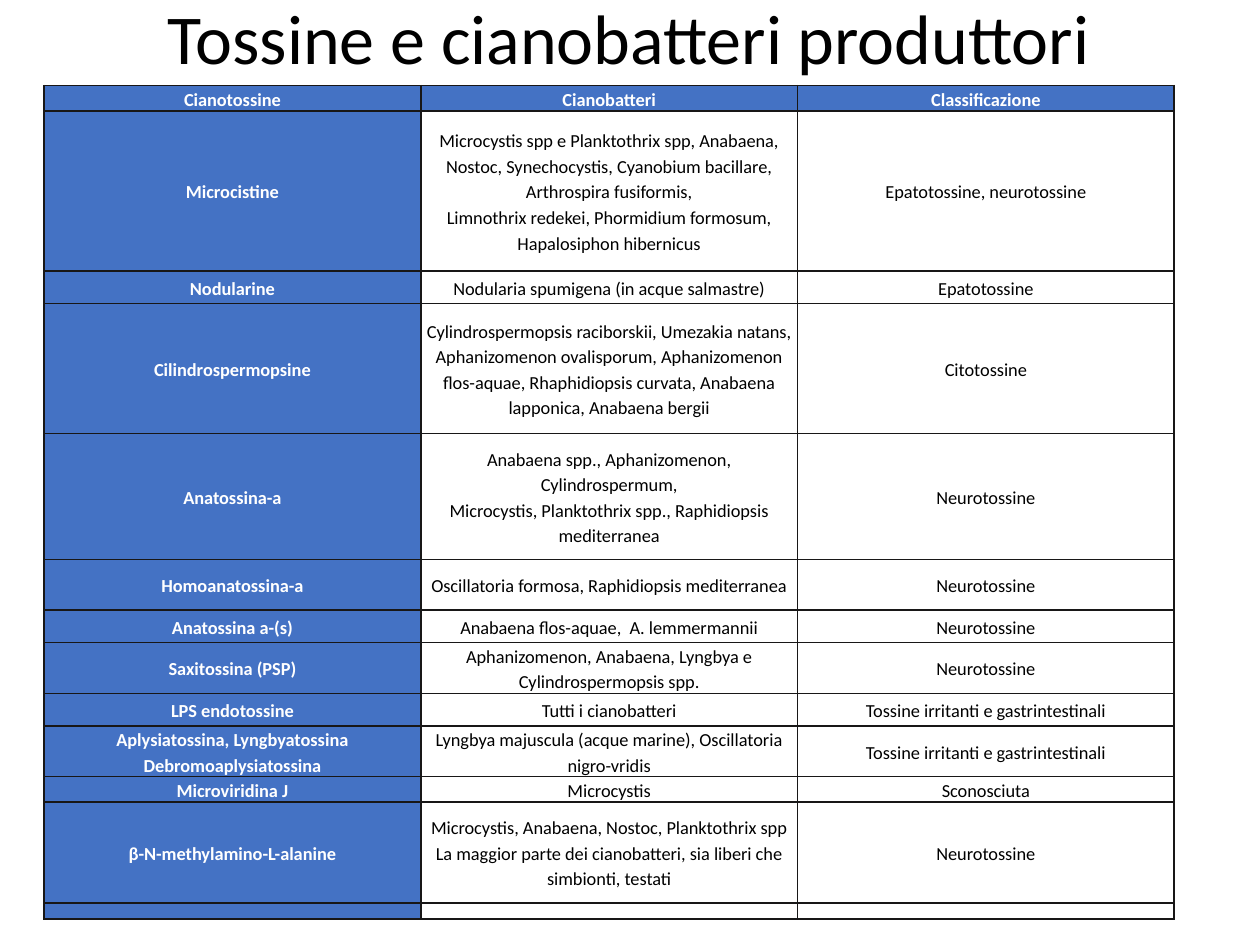
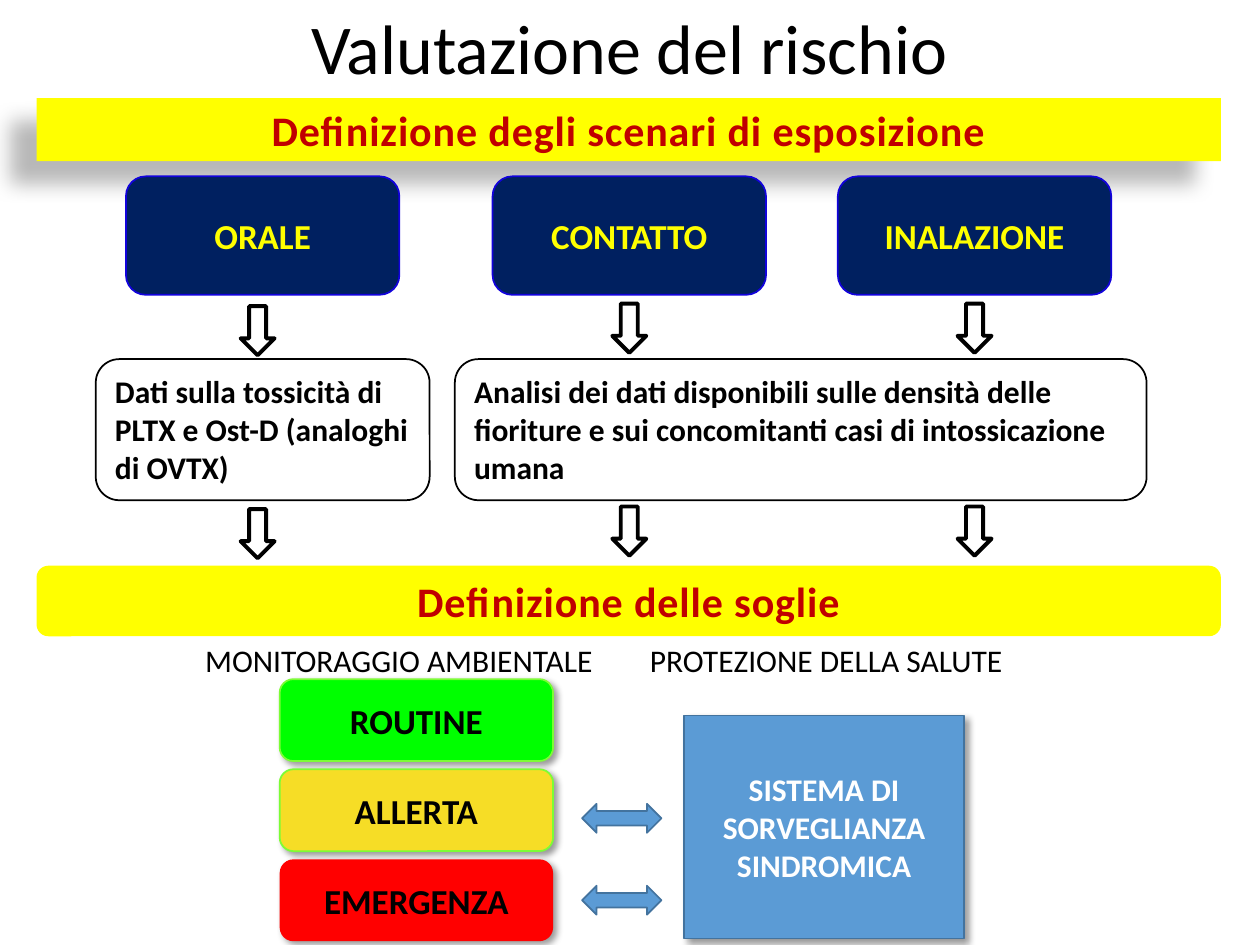
"""Builds two slides on cyanotoxins: the table of producers and the risk assessment chart."""
from lxml import etree
from pptx import Presentation
from pptx.dml.color import RGBColor
from pptx.enum.shapes import MSO_SHAPE
from pptx.enum.text import MSO_ANCHOR, MSO_AUTO_SIZE, PP_ALIGN
from pptx.oxml.ns import qn
from pptx.util import Inches, Pt

RECTANGLE = MSO_SHAPE.RECTANGLE
ROUNDED = MSO_SHAPE.ROUNDED_RECTANGLE
DOWN_ARROW = MSO_SHAPE.DOWN_ARROW
DOUBLE_ARROW = MSO_SHAPE.LEFT_RIGHT_ARROW
TOP, MIDDLE = MSO_ANCHOR.TOP, MSO_ANCHOR.MIDDLE
LEFT, CENTER = PP_ALIGN.LEFT, PP_ALIGN.CENTER
GROW = MSO_AUTO_SIZE.SHAPE_TO_FIT_TEXT

BLACK = RGBColor(0x00, 0x00, 0x00)
WHITE = RGBColor(0xFF, 0xFF, 0xFF)
TABLE_BLUE = RGBColor(0x44, 0x72, 0xC4)
BORDER = RGBColor(0x18, 0x17, 0x17)
YELLOW = RGBColor(0xFF, 0xFF, 0x00)
DARK_RED = RGBColor(0xC0, 0x00, 0x00)
NAVY = RGBColor(0x00, 0x20, 0x60)
NAVY_EDGE = RGBColor(0x12, 0x02, 0xDC)
GREEN = RGBColor(0x00, 0xFF, 0x00)
GREEN_EDGE = RGBColor(0x7C, 0xFD, 0x35)
AMBER = RGBColor(0xF6, 0xDD, 0x26)
RED = RGBColor(0xFF, 0x00, 0x00)
SKY = RGBColor(0x5B, 0x9B, 0xD5)
SKY_EDGE = RGBColor(0x43, 0x73, 0x9E)

FONT = "Calibri"
SOFT_SHADOW = (40, 4, 3, 45)
BAND_SHADOW = (28, 11.8, 19.7, 141)


def write_text(frame, lines, size, color, bold=False, align=CENTER, leading=None, tracking=None):
    for number, line in enumerate(lines):
        para = frame.paragraphs[0] if number == 0 else frame.add_paragraph()
        para.alignment = align
        para.line_spacing = leading
        for position, part in enumerate(line.split("\n")):
            if position:
                para.add_line_break()
            span = para.add_run()
            span.text = part
            span.font.name = FONT
            span.font.size = Pt(size)
            span.font.bold = bold
            span.font.color.rgb = color
            if tracking:
                span.font._element.set("spc", str(tracking))


def add_block(shapes, kind, at, fill=None, edge=None, weight=1, shadow=None):
    block = shapes.add_shape(kind, *map(Inches, at))
    block.shadow.inherit = False
    if fill is None:
        block.fill.background()
    else:
        block.fill.solid()
        block.fill.fore_color.rgb = fill
    if edge is None:
        block.line.fill.background()
    else:
        block.line.color.rgb = edge
        block.line.width = Pt(weight)
    if shadow:
        opacity, blur, distance, angle = shadow
        effects = block._element.spPr.find(qn("a:effectLst"))
        outer = etree.SubElement(effects, qn("a:outerShdw"), blurRad=str(Pt(blur)),
                                 dist=str(Pt(distance)), dir=str(angle * 60000),
                                 algn="tl", rotWithShape="0")
        tint = etree.SubElement(outer, qn("a:srgbClr"), val=str(BLACK))
        etree.SubElement(tint, qn("a:alpha"), val=str(opacity * 1000))
    block.text_frame.word_wrap = True
    block.text_frame.vertical_anchor = MIDDLE
    return block


deck = Presentation()
deck.slide_width = Inches(10)
deck.slide_height = Inches(7.5)

TITLES = [
    ("Tossine e cianobatteri produttori", (0.27, -0.11, 9.44, 0.89)),
    ("Valutazione del rischio", (0.18, 0.01, 9.63, 0.81)),
]
pages = []
for title, at in TITLES:
    page = deck.slides.add_slide(deck.slide_layouts[6])
    box = page.shapes.add_textbox(*map(Inches, at))
    box.text_frame.word_wrap = True
    box.text_frame.vertical_anchor = MIDDLE
    write_text(box.text_frame, [title], 40, BLACK, leading=0.9)
    pages.append(page)
toxin_page, risk_page = pages

TOXINS = [
    (0.2, "Cianotossine", "Cianobatteri", "Classificazione"),
    (1.27, "Microcistine",
     "Microcystis spp e Planktothrix spp, Anabaena, Nostoc, Synechocystis, Cyanobium bacillare, "
     "Arthrospira fusiformis,|Limnothrix redekei, Phormidium formosum,|Hapalosiphon hibernicus",
     "Epatotossine, neurotossine"),
    (0.26, "Nodularine", "Nodularia spumigena (in acque salmastre)", "Epatotossine"),
    (1.03, "Cilindrospermopsine",
     "Cylindrospermopsis raciborskii, Umezakia natans, Aphanizomenon ovalisporum, Aphanizomenon "
     "flos-aquae, Rhaphidiopsis curvata, Anabaena lapponica, Anabaena bergii", "Citotossine"),
    (1, "Anatossina-a",
     "Anabaena spp., Aphanizomenon, Cylindrospermum,|"
     "Microcystis, Planktothrix spp., Raphidiopsis mediterranea", "Neurotossine"),
    (0.4, "Homoanatossina-a", "Oscillatoria formosa, Raphidiopsis mediterranea", "Neurotossine"),
    (0.26, "Anatossina a-(s)", "Anabaena flos-aquae,  A. lemmermannii", "Neurotossine"),
    (0.4, "Saxitossina (PSP)", "Aphanizomenon, Anabaena, Lyngbya e Cylindrospermopsis spp.",
     "Neurotossine"),
    (0.26, "LPS endotossine", "Tutti i cianobatteri", "Tossine irritanti e gastrintestinali"),
    (0.4, "Aplysiatossina, Lyngbyatossina|Debromoaplysiatossina",
     "Lyngbya majuscula (acque marine), Oscillatoria nigro-vridis",
     "Tossine irritanti e gastrintestinali"),
    (0.2, "Microviridina J", "Microcystis", "Sconosciuta"),
    (0.8, "β-N-methylamino-L-alanine",
     "Microcystis, Anabaena, Nostoc, Planktothrix spp|"
     "La maggior parte dei cianobatteri, sia liberi che simbionti, testati", "Neurotossine"),
    (0.13, "", "", ""),
]
table = toxin_page.shapes.add_table(len(TOXINS), 3, Inches(0.35), Inches(0.68),
                                    Inches(8.98), Inches(6.62)).table
table.horz_banding = False
for column in table.columns:
    column.width = Inches(2.99)
for row_number, (height, *texts) in enumerate(TOXINS):
    table.rows[row_number].height = Inches(height)
    for column_number, text in enumerate(texts):
        cell = table.cell(row_number, column_number)
        heading = row_number == 0 or column_number == 0
        cell.margin_left = cell.margin_right = Inches(0.04)
        cell.margin_top = cell.margin_bottom = 0
        cell.vertical_anchor = MIDDLE
        for side in ("lnL", "lnR", "lnT", "lnB"):
            line = etree.SubElement(cell._tc.get_or_add_tcPr(), qn(f"a:{side}"), w=str(Pt(1)))
            paint = etree.SubElement(line, qn("a:solidFill"))
            etree.SubElement(paint, qn("a:srgbClr"), val=str(BORDER))
        cell.fill.solid()
        cell.fill.fore_color.rgb = TABLE_BLUE if heading else WHITE
        if text:
            write_text(cell.text_frame, text.split("|"), 10.5, WHITE if heading else BLACK,
                       bold=heading, leading=1.15)
        else:
            etree.SubElement(cell.text_frame.paragraphs[0]._p, qn("a:endParaRPr"), sz="600")

shapes = risk_page.shapes
BANDS = [
    ("Definizione degli scenari di esposizione", RECTANGLE, 0.78, 0.5, BAND_SHADOW),
    ("Definizione delle soglie", ROUNDED, 4.49, 0.56, None),
]
for text, kind, top, height, shadow in BANDS:
    band = add_block(shapes, kind, (0.29, top, 9.4, height), YELLOW, shadow=shadow)
    band.text_frame.vertical_anchor = TOP
    band.text_frame.auto_size = GROW
    write_text(band.text_frame, [text], 24, DARK_RED, bold=True, tracking=50)

for text, left in [("ORALE", 1), ("CONTATTO", 3.91), ("INALAZIONE", 6.65)]:
    route = add_block(shapes, ROUNDED, (left, 1.4, 2.17, 0.94), NAVY, NAVY_EDGE)
    write_text(route.text_frame, [text], 20, YELLOW, bold=True)

EVIDENCE = [
    (0.76, 2.65, False, ["Dati sulla tossicità di", "PLTX e Ost-D (analoghi\ndi OVTX)"]),
    (3.61, 5.49, True, ["Analisi dei dati disponibili sulle densità delle fioriture "
                        "e sui concomitanti casi di intossicazione umana"]),
]
for left, width, wrap, lines in EVIDENCE:
    evidence = add_block(shapes, ROUNDED, (left, 2.85, width, 1.12), edge=BLACK)
    evidence.text_frame.vertical_anchor = TOP
    evidence.text_frame.word_wrap = wrap
    evidence.text_frame.auto_size = GROW
    write_text(evidence.text_frame, lines, 18, BLACK, bold=True, align=LEFT)

for top in (2.41, 4.02):
    arrows = shapes.add_group_shape()
    for left, drop in [(1.91, 0.02), (4.86, 0), (7.6, 0)]:
        add_block(arrows.shapes, DOWN_ARROW, (left, top + drop, 0.27, 0.39),
                  edge=BLACK, weight=2.25)

LEVELS = [("ROUTINE", GREEN, GREEN_EDGE), ("ALLERTA", AMBER, GREEN_EDGE), ("EMERGENZA", RED, None)]
for number, (text, fill, edge) in enumerate(LEVELS):
    level = add_block(shapes, ROUNDED, (2.22, 5.39 + number * 0.715, 2.17, 0.65),
                      fill, edge, shadow=SOFT_SHADOW)
    write_text(level.text_frame, [text], 20, BLACK, bold=True)

for text, left, width in [("MONITORAGGIO AMBIENTALE", 1.53, 3.3),
                          ("PROTEZIONE DELLA SALUTE", 5.06, 3.02)]:
    box = shapes.add_textbox(Inches(left), Inches(5.04), Inches(width), Inches(0.4))
    box.text_frame.word_wrap = False
    box.text_frame.auto_size = GROW
    write_text(box.text_frame, [text], 18, BLACK, align=LEFT)

surveillance = add_block(shapes, RECTANGLE, (5.43, 5.68, 2.22, 1.77), SKY, SKY_EDGE,
                         shadow=SOFT_SHADOW)
write_text(surveillance.text_frame, ["SISTEMA DI SORVEGLIANZA SINDROMICA"], 18, WHITE, bold=True)
for top in (6.38, 7.03):
    add_block(shapes, DOUBLE_ARROW, (4.62, top, 0.63, 0.23), SKY, SKY_EDGE)

deck.save("out.pptx")
